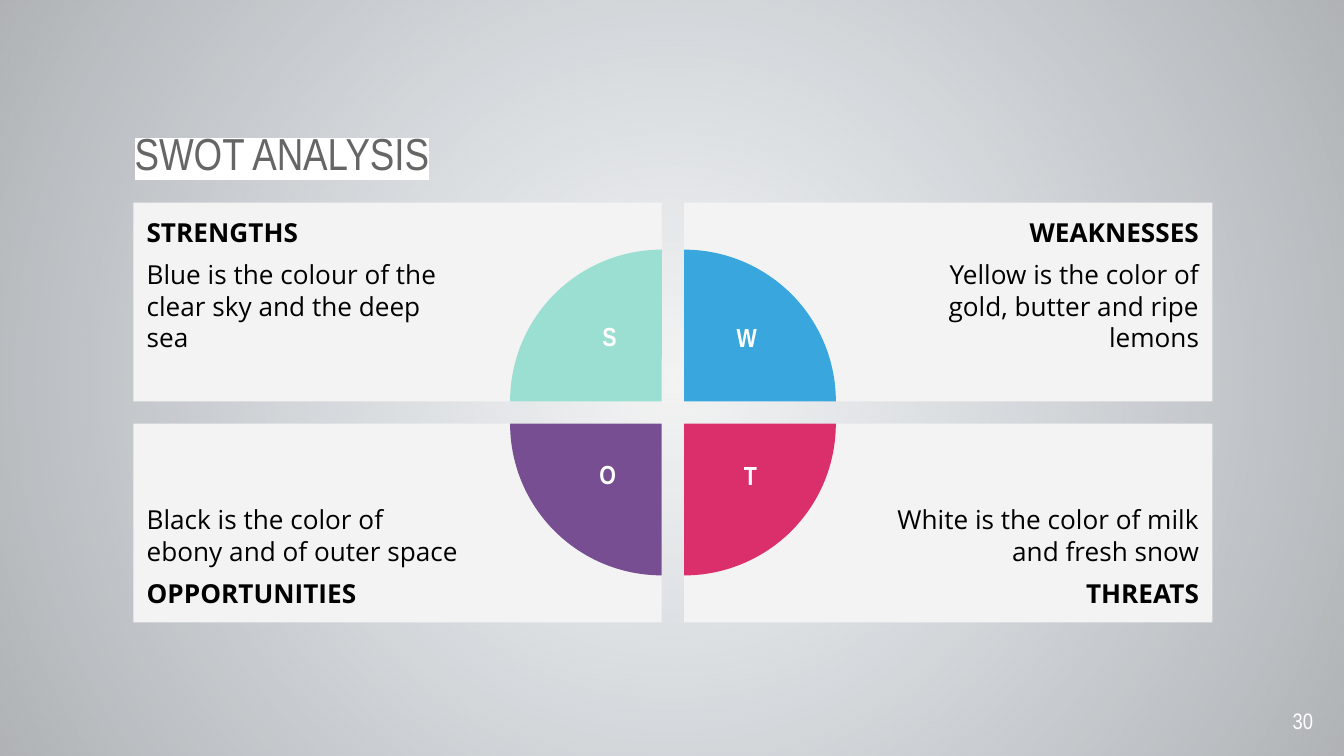
from lxml.etree import SubElement
from pptx import Presentation
from pptx.dml.color import RGBColor
from pptx.enum.shapes import MSO_SHAPE
from pptx.enum.text import MSO_ANCHOR, PP_ALIGN
from pptx.oxml import parse_xml
from pptx.oxml.ns import nsdecls, qn
from pptx.util import Pt

WIDTH, HEIGHT = 720, 405
CARD_LEFT, CARD_TOP = 71.5, 108.5
CARD_WIDTH, CARD_HEIGHT, GAP = 283, 106.5, 12
RADIUS = 81.25
INSET, WIDE_INSET = 7.2, 108

# column, row, heading, body, pie colour, pie rotation, letter, letter centre and top
QUADRANTS = [
    (0, 0, "STRENGTHS", "Blue is the colour of the clear sky and the deep sea",
     "9BDED2", 0, "S", 326.5, 168),
    (1, 0, "WEAKNESSES", "Yellow is the color of gold, butter and ripe lemons",
     "39A6DE", 90, "W", 398.5, 168.5),
    (0, 1, "OPPORTUNITIES", "Black is the color of ebony and of outer space",
     "774E92", 270, "O", 325, 242),
    (1, 1, "THREATS", "White is the color of milk and fresh snow",
     "DB2F6B", 180, "T", 402, 242.5),
]


def color(value):
    return RGBColor.from_string(value)


class SlideBuilder:
    heading_font = "Arial Narrow"
    body_font = "Open Sans"

    def __init__(self, slide):
        self.slide = slide

    def backdrop(self, fill, inner, outer, outer_alpha):
        """Fill the slide, then lay a radial gradient with fading opacity on it."""
        background = self.slide.background.fill
        background.solid()
        background.fore_color.rgb = color(fill)
        shape = self.shape(MSO_SHAPE.RECTANGLE, 0, 0, WIDTH, HEIGHT, fill)
        properties = shape._element.spPr
        gradient = parse_xml(
            f'<a:gradFill {nsdecls("a")}><a:gsLst>'
            f'<a:gs pos="0"><a:srgbClr val="{inner}"><a:alpha val="0"/></a:srgbClr></a:gs>'
            f'<a:gs pos="100000"><a:srgbClr val="{outer}">'
            f'<a:alpha val="{outer_alpha * 1000}"/></a:srgbClr></a:gs></a:gsLst>'
            '<a:path path="circle"><a:fillToRect l="50000" t="50000" r="50000" b="50000"/>'
            '</a:path></a:gradFill>')
        properties.replace(properties.find(qn("a:solidFill")), gradient)

    def shape(self, kind, left, top, width, height, fill):
        shape = self.slide.shapes.add_shape(kind, Pt(left), Pt(top), Pt(width), Pt(height))
        shape.shadow.inherit = False
        shape.fill.solid()
        shape.fill.fore_color.rgb = color(fill)
        shape.line.fill.background()
        return shape

    def style(self, paragraph, size, font, text_color, bold=False, align=PP_ALIGN.LEFT):
        paragraph.font.size = Pt(size)
        paragraph.font.name = font
        paragraph.font.bold = bold
        paragraph.font.color.rgb = color(text_color)
        paragraph.alignment = align

    def text(self, left, top, width, height, text, size, text_color,
             bold=False, align=PP_ALIGN.LEFT, margin_top=3.6, wrap=True):
        box = self.slide.shapes.add_textbox(Pt(left), Pt(top), Pt(width), Pt(height))
        frame = box.text_frame
        frame.word_wrap = wrap
        frame.margin_top = Pt(margin_top)
        paragraph = frame.paragraphs[0]
        paragraph.text = text
        self.style(paragraph, size, self.heading_font, text_color, bold, align)
        return paragraph

    def title(self, left, top, width, height, text, text_color, highlight):
        paragraph = self.text(left, top, width, height, text, 24, text_color, margin_top=14)
        paragraph.line_spacing = 0.82
        properties = paragraph.runs[0]._r.get_or_add_rPr()
        mark = SubElement(properties, qn("a:highlight"))
        SubElement(mark, qn("a:srgbClr")).set("val", highlight)

    def card(self, column, row, heading, body):
        left = CARD_LEFT + column * (CARD_WIDTH + GAP)
        top = CARD_TOP + row * (CARD_HEIGHT + GAP)
        shape = self.shape(MSO_SHAPE.RECTANGLE, left, top, CARD_WIDTH, CARD_HEIGHT, "F3F3F3")
        frame = shape.text_frame
        frame.word_wrap = True
        frame.vertical_anchor = MSO_ANCHOR.BOTTOM if row else MSO_ANCHOR.TOP
        frame.margin_left = Pt(WIDE_INSET if column else INSET)
        frame.margin_right = Pt(INSET if column else WIDE_INSET)
        frame.margin_top = frame.margin_bottom = Pt(INSET)
        align = PP_ALIGN.RIGHT if column else PP_ALIGN.LEFT
        # The heading sits on the outer side: first above, last below
        lines = [body, heading] if row else [heading, body]
        frame.text = "\n".join(lines)
        for paragraph in frame.paragraphs:
            self.style(paragraph, 14, self.body_font, "000000", paragraph.text == heading, align)
        last = frame.paragraphs[-1]
        last.space_before = last.space_after = Pt(6)

    def quarter(self, column, row, fill, rotation):
        """Draw a quarter disc centred on the inner corner of its card."""
        center_x = CARD_LEFT + CARD_WIDTH + column * GAP
        center_y = CARD_TOP + CARD_HEIGHT + row * GAP
        pie = self.shape(MSO_SHAPE.PIE, center_x - RADIUS, center_y - RADIUS,
                         2 * RADIUS, 2 * RADIUS, fill)
        pie.adjustments[0] = 108  # 180 degrees
        pie.adjustments[1] = 162  # 270 degrees
        pie.rotation = rotation

    def letter(self, center, top, text):
        width = 22
        self.text(center - width / 2, top, width, 34, text, 14, "FFFFFF",
                  True, PP_ALIGN.CENTER, wrap=False)


def main():
    presentation = Presentation()
    presentation.slide_width, presentation.slide_height = Pt(WIDTH), Pt(HEIGHT)
    builder = SlideBuilder(presentation.slides.add_slide(presentation.slide_layouts[6]))

    # Backdrop, title and slide number
    builder.backdrop("F3F3F3", "073763", "010B15", 28)
    builder.title(65, 58.3, 323, 55.5, "SWOT ANALYSIS", "666666", "FFFFFF")
    builder.text(667.5, 371.5, 43, 27.5, "30", 12, "FFFFFF",
                 align=PP_ALIGN.RIGHT, margin_top=INSET)

    # Cards, then the disc and its letters on top
    for column, row, heading, body, *_ in QUADRANTS:
        builder.card(column, row, heading, body)
    for column, row, _, _, fill, rotation, letter, center, top in QUADRANTS:
        builder.quarter(column, row, fill, rotation)
        builder.letter(center, top, letter)

    presentation.save("out.pptx")


if __name__ == "__main__":
    main()
